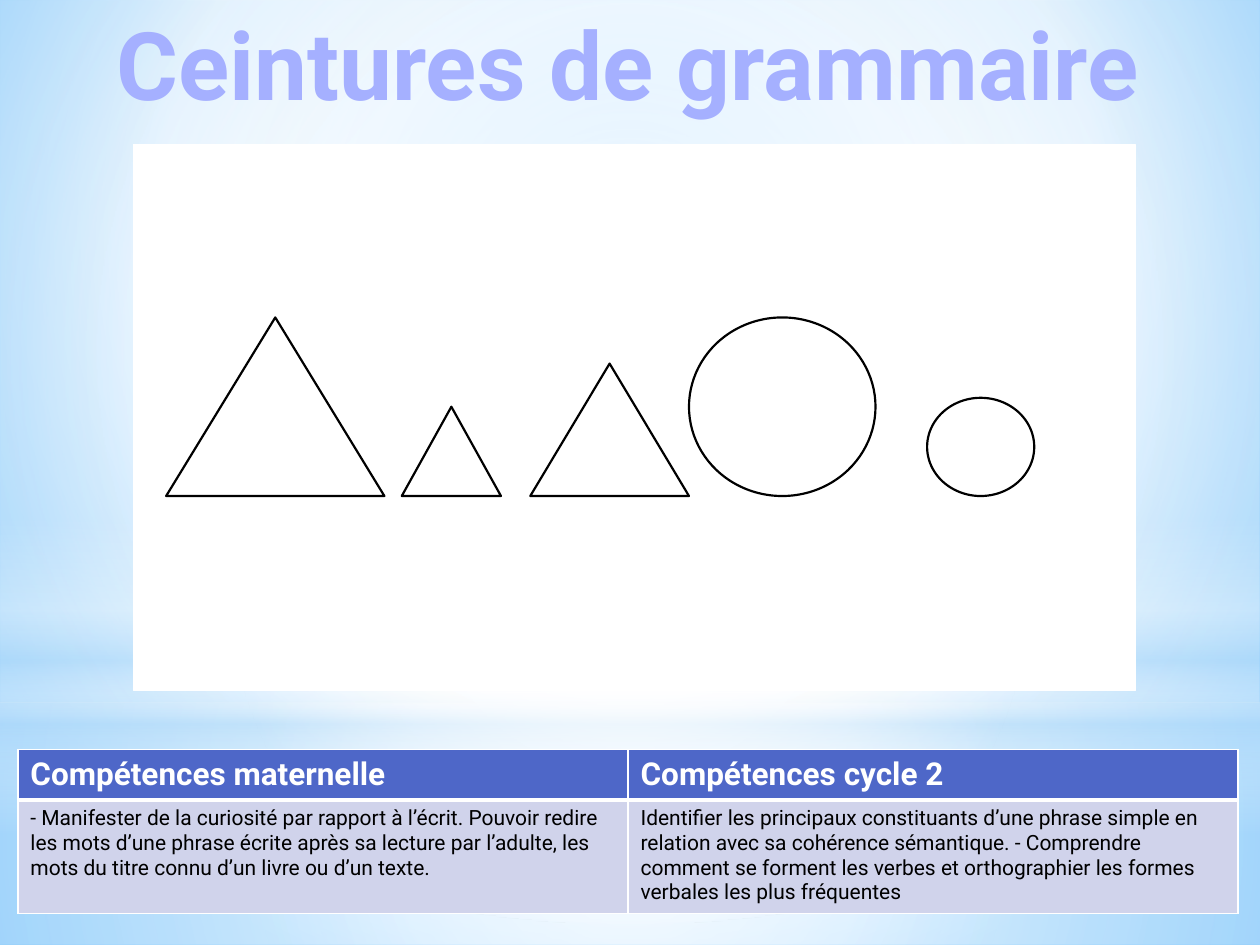
from lxml.etree import SubElement
from pptx import Presentation
from pptx.dml.color import RGBColor
from pptx.enum.shapes import MSO_SHAPE as Shape
from pptx.enum.text import MSO_AUTO_SIZE as AutoSize, PP_ALIGN as Align
from pptx.oxml.ns import qn
from pptx.util import Cm, Pt

FONT = "Roboto"
CENTER = (50, 50, 50, 50)


def rgb(color):
    return RGBColor.from_string(color)


def set_gradient(fill, holder, stops, focus=None):
    fill.solid()
    solid = holder.find(qn("a:solidFill"))
    grad = holder.makeelement(qn("a:gradFill"), {"rotWithShape": "1"})
    stop_list = SubElement(grad, qn("a:gsLst"))
    for pos, color, opacity in stops:
        stop = SubElement(stop_list, qn("a:gs"), pos=str(pos * 1000))
        clr = SubElement(stop, qn("a:srgbClr"), val=color)
        if opacity < 100:
            SubElement(clr, qn("a:alpha"), val=str(opacity * 1000))
    if focus:
        route = SubElement(grad, qn("a:path"), path="circle")
        SubElement(route, qn("a:fillToRect"),
                   {side: str(v * 1000) for side, v in zip("ltrb", focus)})
    else:
        SubElement(grad, qn("a:lin"), ang="5400000", scaled="0")
    holder.replace(solid, grad)


def style_text(tf, size, color, bold):
    for p in tf.paragraphs:
        for r in p.runs:
            r.font.name = FONT
            r.font.size = Pt(size)
            r.font.bold = bold
            r.font.color.rgb = rgb(color)


def add_outlined(slide, kind, box, line, width):
    sp = slide.shapes.add_shape(kind, *map(Cm, box))
    sp.shadow.inherit = False
    sp.fill.solid()
    sp.fill.fore_color.rgb = rgb("FFFFFF")
    sp.line.color.rgb = rgb(line)
    sp.line.width = Pt(width)


def add_backdrop(slide, width, height):
    bg = slide.background.fill
    set_gradient(bg, slide.element.find(".//" + qn("p:bgPr")),
                 [(0, "9ED5FF", 100), (60, "FFFFFF", 100), (100, "5BB9FF", 100)],
                 (20, 10, 20, 60))
    horizon = 14.17
    layers = [
        (Shape.RECTANGLE, horizon, height - horizon, CENTER,
         [(0, "FFFFFF", 91), (37, "FFFFFF", 76), (100, "B4DCFA", 79)]),
        (Shape.RECTANGLE, 0, horizon, CENTER,
         [(0, "FFFFFF", 89), (48, "FFFFFF", 62), (100, "B4DCFA", 79)]),
        (Shape.RECTANGLE, 10.46, 6.35, None,
         [(0, "FFFFFF", 0), (29, "FFFFFF", 30), (45, "B4DCFA", 40),
          (55, "FFFFFF", 26), (65, "B4DCFA", 60), (100, "FFFFFF", 0)]),
        (Shape.OVAL, 4.45, horizon, CENTER,
         [(0, "FFFFFF", 100), (56, "FFFFFF", 0)]),
    ]
    for kind, top, depth, focus, stops in layers:
        sp = slide.shapes.add_shape(kind, 0, Cm(top), Cm(width), Cm(depth))
        sp.shadow.inherit = False
        sp.line.fill.background()
        set_gradient(sp.fill, sp.element.spPr, stops, focus)


def add_title(slide, box, text):
    tf = slide.shapes.add_textbox(*map(Cm, box)).text_frame
    tf.word_wrap = False
    tf.auto_size = AutoSize.SHAPE_TO_FIT_TEXT
    tf.text = text
    tf.paragraphs[0].alignment = Align.CENTER
    style_text(tf, 54, "A5B0FF", True)


def add_drawing(slide, box):
    left, top = box[:2]
    add_outlined(slide, Shape.RECTANGLE, box, "FFFFFF", 0.75)
    baseline = top + 7.08
    figures = [
        (Shape.ISOSCELES_TRIANGLE, 0.66, 4.4, 3.6),
        (Shape.ISOSCELES_TRIANGLE, 5.41, 2, 1.8),
        (Shape.ISOSCELES_TRIANGLE, 8, 3.2, 2.67),
        (Shape.OVAL, 11.2, 3.76, 3.6),
        (Shape.OVAL, 16, 2.16, 1.98),
    ]
    for kind, x, w, h in figures:
        add_outlined(slide, kind, (left + x, baseline - h, w, h), "000000", 1.25)


def set_borders(cell, bottom):
    tcPr = cell._tc.get_or_add_tcPr()
    for i, (side, width) in enumerate(zip("LRTB", (1, 1, 1, bottom))):
        ln = tcPr.makeelement(qn("a:ln" + side), {"w": str(Pt(width))})
        fill = SubElement(ln, qn("a:solidFill"))
        SubElement(fill, qn("a:srgbClr"), val="FFFFFF")
        tcPr.insert(i, ln)


def add_skills(slide, box, rows):
    heights = (0.99, 2.18)
    table = slide.shapes.add_table(len(rows), len(rows[0]), *map(Cm, box)).table
    for col in table.columns:
        col.width = Cm(box[2] / len(rows[0]))
    looks = [("4E67C8", 18, "FFFFFF", True, 3), ("D0D3EB", 12, "000000", False, 1)]
    for i, (texts, look) in enumerate(zip(rows, looks)):
        fill, size, color, bold, bottom = look
        table.rows[i].height = Cm(heights[i])
        for j, text in enumerate(texts):
            cell = table.cell(i, j)
            cell.text_frame.text = text
            style_text(cell.text_frame, size, color, bold)
            cell.fill.solid()
            cell.fill.fore_color.rgb = rgb(fill)
            set_borders(cell, bottom)


def main():
    width, height = 25.4, 19.05
    prs = Presentation()
    prs.slide_width, prs.slide_height = Cm(width), Cm(height)
    slide = prs.slides.add_slide(prs.slide_layouts[6])
    add_backdrop(slide, width, height)
    add_title(slide, (1.6, 0, 22.12, 2.57), "Ceintures de grammaire")
    add_skills(slide, (0.36, 15.11, 24.6, 3.17), [
        ("Compétences maternelle", "Compétences cycle 2"),
        ("- Manifester de la curiosité par rapport à l’écrit. Pouvoir redire les mots "
         "d’une phrase écrite après sa lecture par l’adulte, les mots du titre connu "
         "d’un livre ou d’un texte.",
         "Identifier les principaux constituants d’une phrase simple en relation avec "
         "sa cohérence sémantique. - Comprendre comment se forment les verbes et "
         "orthographier les formes verbales les plus fréquentes"),
    ])
    add_drawing(slide, (2.69, 2.92, 20.2, 11))
    prs.save("out.pptx")


if __name__ == "__main__":
    main()
